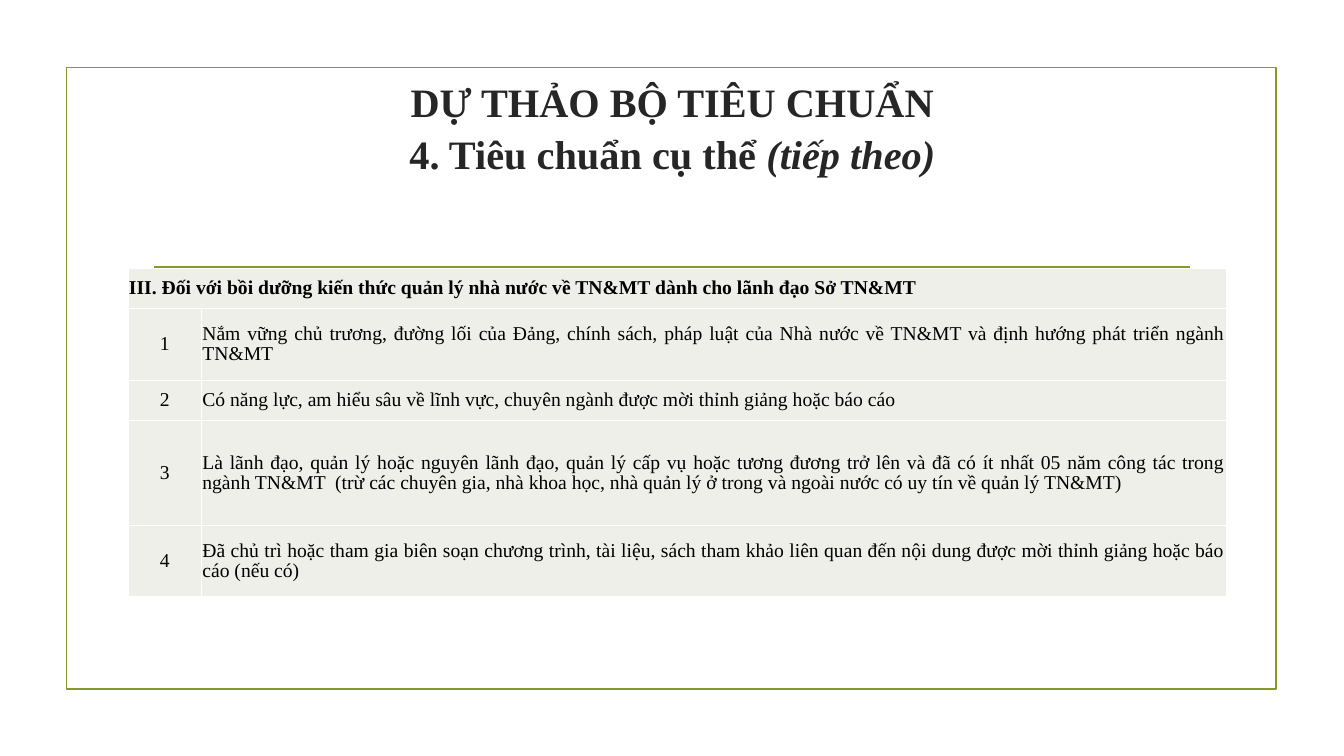
from dataclasses import dataclass

from lxml import etree
from pptx import Presentation
from pptx.dml.color import RGBColor
from pptx.enum import shapes, text
from pptx.oxml import ns
from pptx.util import Cm, Pt

FONT = "Times New Roman"
GREEN, DARK, BLACK, WHITE, PALE = "83992A", "262626", "000000", "FFFFFF", "EDEFE8"


@dataclass
class Criterion:
    content: str
    height: float


HEADING = "III. Đối với bồi dưỡng kiến thức quản lý nhà nước về TN&MT dành cho lãnh đạo Sở TN&MT"
HEADING_HEIGHT = 1.02
COLUMN_WIDTHS = (1.85, 25.83)
CRITERIA = [
    Criterion("Nắm vững chủ trương, đường lối của Đảng, chính sách, pháp luật của "
              "Nhà nước về TN&MT và định hướng phát triển ngành TN&MT", 1.8),
    Criterion("Có năng lực, am hiểu sâu về lĩnh vực, chuyên ngành được mời thỉnh "
              "giảng hoặc báo cáo", 1.02),
    Criterion("Là lãnh đạo, quản lý hoặc nguyên lãnh đạo, quản lý cấp vụ hoặc tương "
              "đương trở lên và đã có ít nhất 05 năm công tác trong ngành TN&MT  (trừ "
              "các chuyên gia, nhà khoa học, nhà quản lý ở trong và ngoài nước có uy "
              "tín về quản lý TN&MT)", 2.64),
    Criterion("Đã chủ trì hoặc tham gia biên soạn chương trình, tài liệu, sách tham "
              "khảo liên quan đến nội dung được mời thỉnh giảng hoặc báo cáo (nếu có)", 1.8),
]


def color(value: str) -> RGBColor:
    return RGBColor.from_string(value)


def set_font(font, size: float, value: str, bold: bool) -> None:
    font.name, font.size, font.bold = FONT, Pt(size), bold
    font.color.rgb = color(value)


def set_line(line) -> None:
    line.color.rgb = color(GREEN)
    line.width = Pt(1.25)


def add_frame(s) -> None:
    frame = s.shapes.add_shape(shapes.MSO_SHAPE.RECTANGLE,
                               Cm(1.68), Cm(1.7), Cm(30.48), Cm(15.67))
    frame.shadow.inherit = False
    frame.fill.background()
    set_line(frame.line)


def add_rule(s) -> None:
    rule = s.shapes.add_connector(shapes.MSO_CONNECTOR.STRAIGHT,
                                  Cm(3.89), Cm(6.73), Cm(30), Cm(6.73))
    set_line(rule.line)
    etree.SubElement(rule._element.spPr, ns.qn("a:effectLst"))


def write_title(s) -> None:
    sp = s.shapes.title
    sp.left, sp.top, sp.width, sp.height = Cm(3.61), Cm(1.85), Cm(26.67), Cm(3.61)
    tf = sp.text_frame
    tf.word_wrap = True
    tf.auto_size = text.MSO_AUTO_SIZE.NONE
    tf.vertical_anchor = text.MSO_ANCHOR.TOP
    tf.margin_top = 0
    p = tf.paragraphs[0]
    p.alignment = text.PP_ALIGN.CENTER
    p.line_spacing = 1.08
    set_font(p.font, 28.8, DARK, True)
    p.add_run().text = "DỰ THẢO BỘ TIÊU CHUẨN"
    p.add_line_break()
    p.add_run().text = "4. Tiêu chuẩn cụ thể "
    r = p.add_run()
    r.text = "(tiếp theo)"
    r.font.italic = True


def add_borders(cell) -> None:
    """Put a thin white line on each side of the cell."""
    tc_pr = cell._tc.get_or_add_tcPr()
    for i, side in enumerate(("lnL", "lnR", "lnT", "lnB")):
        ln = etree.Element(ns.qn(f"a:{side}"), w=str(Pt(1)))
        fill = etree.SubElement(ln, ns.qn("a:solidFill"))
        etree.SubElement(fill, ns.qn("a:srgbClr"), val=WHITE)
        tc_pr.insert(i, ln)


def write_cell(cell, content: str, align: text.PP_ALIGN, bold: bool = False) -> None:
    cell.fill.solid()
    cell.fill.fore_color.rgb = color(PALE)
    add_borders(cell)
    cell.margin_left = cell.margin_right = cell.margin_top = Cm(0.02)
    cell.margin_bottom = 0
    cell.vertical_anchor = text.MSO_ANCHOR.MIDDLE
    p = cell.text_frame.paragraphs[0]
    p.alignment = align
    p.line_spacing = 0.93
    set_font(p.font, 14, BLACK, bold)
    p.add_run().text = content


def add_criteria_table(s) -> None:
    heights = [HEADING_HEIGHT] + [c.height for c in CRITERIA]
    table = s.shapes.add_table(len(heights), len(COLUMN_WIDTHS), Cm(3.23), Cm(6.76),
                               Cm(sum(COLUMN_WIDTHS)), Cm(sum(heights))).table
    for column, width in zip(table.columns, COLUMN_WIDTHS):
        column.width = Cm(width)
    for row, height in zip(table.rows, heights):
        row.height = Cm(height)
    table.cell(0, 0).merge(table.cell(0, 1))
    write_cell(table.cell(0, 0), HEADING, text.PP_ALIGN.JUSTIFY, bold=True)
    for i, criterion in enumerate(CRITERIA, start=1):
        write_cell(table.cell(i, 0), str(i), text.PP_ALIGN.CENTER)
        write_cell(table.cell(i, 1), criterion.content, text.PP_ALIGN.JUSTIFY)


def main() -> None:
    prs = Presentation()
    prs.slide_width, prs.slide_height = Cm(33.87), Cm(19.05)
    s = prs.slides.add_slide(prs.slide_layouts[5])
    add_frame(s)
    add_rule(s)
    write_title(s)
    add_criteria_table(s)
    prs.save("out.pptx")


if __name__ == "__main__":
    main()
